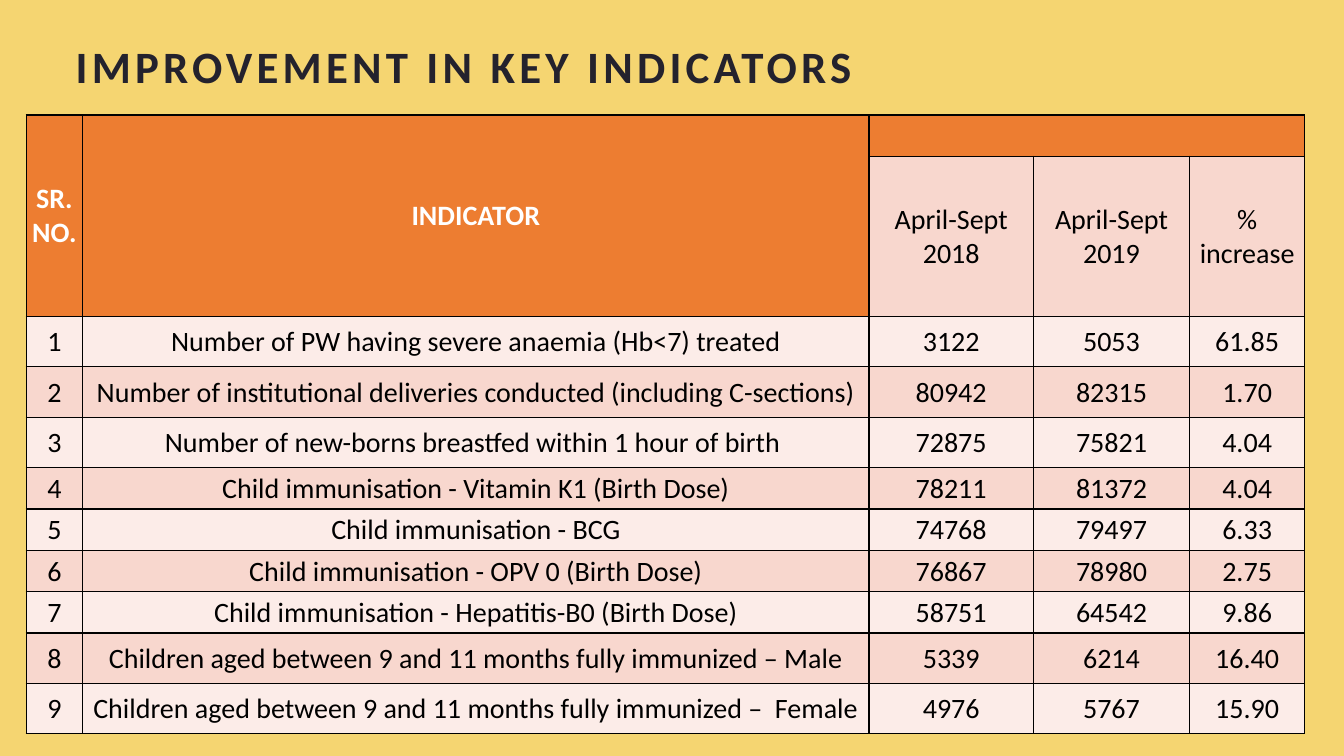
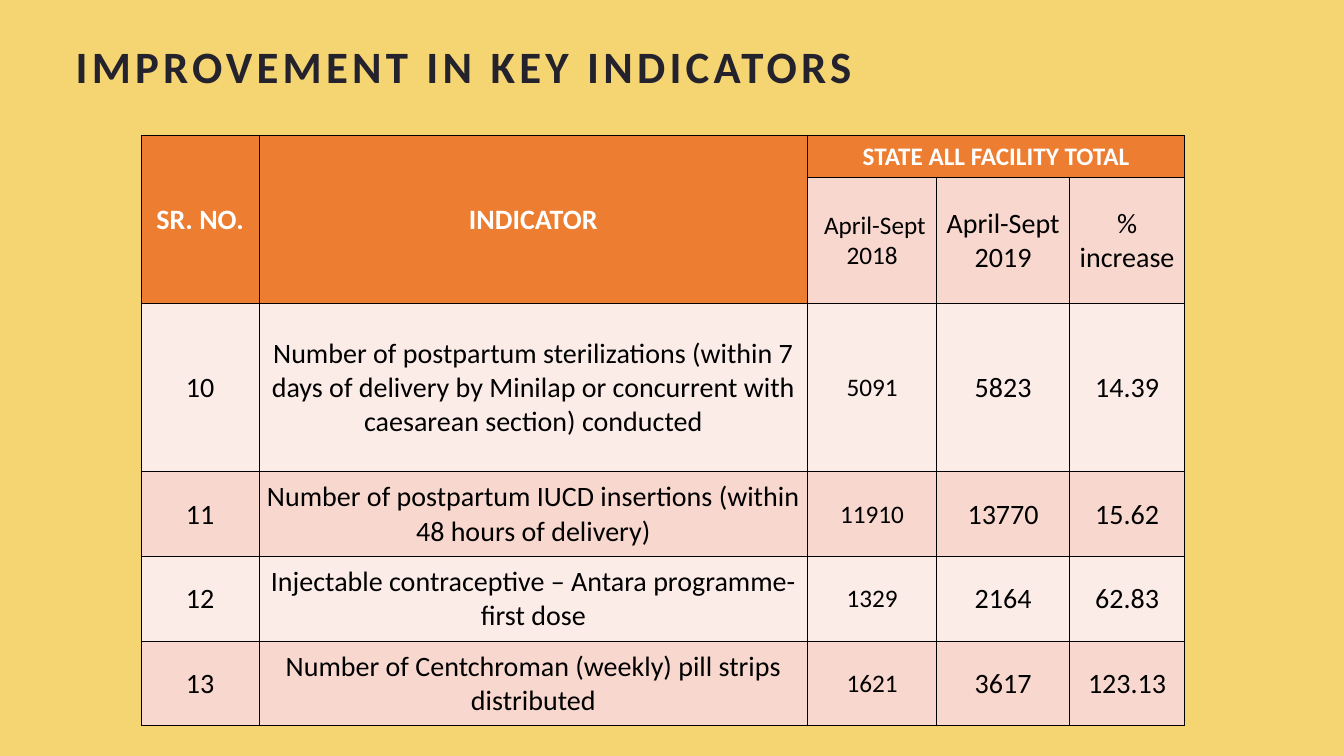
from lxml.etree import SubElement
from pptx import Presentation
from pptx.dml.color import RGBColor
from pptx.enum.text import MSO_ANCHOR as Anchor, MSO_AUTO_SIZE as AutoSize, PP_ALIGN as Align
from pptx.oxml.ns import qn
from pptx.util import Inches, Pt

BACKDROP = RGBColor(0xF5, 0xD5, 0x71)
INK = RGBColor(0x24, 0x22, 0x2D)
ORANGE = RGBColor(0xED, 0x7D, 0x31)
BAND_DARK = RGBColor(0xF8, 0xD7, 0xCE)
BAND_LIGHT = RGBColor(0xFC, 0xEC, 0xE8)
BLACK = RGBColor(0, 0, 0)
WHITE = RGBColor(255, 255, 255)

FONT = "Calibri"
TITLE = "IMPROVEMENT IN KEY INDICATORS"
TITLE_ONLY = 5
HEADER_ROWS = 2
CELL_FORMAT = {
    "vertical_anchor": Anchor.MIDDLE,
    "margin_left": Inches(0.01),
    "margin_top": Inches(0.01),
    "margin_right": Inches(0.01),
    "margin_bottom": 0,
}

BIRTH_TO_IMMUNIZATION = {
    "left": 0.26,
    "top": 1.14,
    "columns": [0.56, 7.8, 1.63, 1.55, 1.14],
    "heights": [0.41, 1.59] + [0.5] * 3 + [0.41] * 4 + [0.5] * 2,
    "border": 1,
    "sizes": [20] * 5,
    "rows": [
        ["SR. NO.", "INDICATOR", "", "", ""],
        ["", "", "April-Sept 2018", "April-Sept 2019", "% increase"],
        ["1", "Number of PW having severe anaemia (Hb<7) treated", "3122", "5053", "61.85"],
        ["2", "Number of institutional deliveries conducted (including C-sections)",
         "80942", "82315", "1.70"],
        ["3", "Number of new-borns breastfed within 1 hour of birth ", "72875", "75821", "4.04"],
        ["4", "Child immunisation - Vitamin K1 (Birth Dose)", "78211", "81372", "4.04"],
        ["5", "Child immunisation - BCG", "74768", "79497", "6.33"],
        ["6", "Child immunisation - OPV 0 (Birth Dose)", "76867", "78980", "2.75"],
        ["7", "Child immunisation - Hepatitis-B0 (Birth Dose)", "58751", "64542", "9.86"],
        ["8", "Children aged between 9 and 11 months fully immunized – Male",
         "5339", "6214", "16.40"],
        ["9", "Children aged between 9 and 11 months fully immunized –  Female",
         "4976", "5767", "15.90"],
    ],
}

FAMILY_PLANNING = {
    "left": 1.4,
    "top": 1.34,
    "columns": [1.17, 5.44, 1.28, 1.32, 1.14],
    "heights": [0.42, 1.25, 1.67] + [0.84] * 3,
    "border": 0.5,
    "sizes": [20, 20, 18, 20, 20],
    "rows": [
        ["SR. NO.", "INDICATOR", "STATE ALL FACILITY TOTAL", "", ""],
        ["", "", " April-Sept 2018", "April-Sept 2019", "% increase"],
        ["10", "Number of postpartum sterilizations (within 7 days of delivery by Minilap "
         "or concurrent with caesarean section) conducted", "5091", "5823", "14.39"],
        ["11", "Number of postpartum IUCD insertions (within 48 hours of delivery)",
         "11910", "13770", "15.62"],
        ["12", "Injectable contraceptive – Antara programme- first dose",
         "1329", "2164", "62.83"],
        ["13", "Number of Centchroman (weekly) pill strips distributed",
         "1621", "3617", "123.13"],
    ],
}


def apply_format(target, values):
    for name, value in values.items():
        setattr(target, name, value)


def write_text(frame, text, align, size, color, bold):
    para = frame.paragraphs[0]
    para.alignment = align
    span = para.add_run()
    span.text = text
    apply_format(span.font, {"name": FONT, "size": Pt(size), "bold": bold})
    span.font.color.rgb = color
    return span


def add_title(page):
    title = page.shapes.title
    apply_format(title, {"left": Inches(0.65), "top": Inches(0.33),
                         "width": Inches(9.84), "height": Inches(0.64)})
    frame = title.text_frame
    apply_format(frame, {"word_wrap": True, "vertical_anchor": Anchor.MIDDLE,
                         "auto_size": AutoSize.SHAPE_TO_FIT_TEXT})
    span = write_text(frame, TITLE, Align.LEFT, 32, INK, True)
    span.font._element.set("spc", "300")


def add_borders(cell, points):
    properties = cell._tc.get_or_add_tcPr()
    for side in ("a:lnL", "a:lnR", "a:lnT", "a:lnB"):
        line = SubElement(properties, qn(side), w=str(Pt(points)))
        fill = SubElement(line, qn("a:solidFill"))
        SubElement(fill, qn("a:srgbClr"), val=str(BLACK))


def format_cell(cell, text, is_header, band, size, border):
    apply_format(cell, CELL_FORMAT)
    add_borders(cell, border)
    cell.fill.solid()
    cell.fill.fore_color.rgb = ORANGE if is_header else band
    if text:
        color = WHITE if is_header else BLACK
        write_text(cell.text_frame, text, Align.CENTER, size, color, is_header)


def add_indicator_table(page, content):
    columns, heights, rows = content["columns"], content["heights"], content["rows"]
    table = page.shapes.add_table(
        len(rows), len(columns), Inches(content["left"]), Inches(content["top"]),
        Inches(sum(columns)), Inches(sum(heights))).table
    apply_format(table, {"first_row": False, "horz_banding": False})
    for column, width in zip(table.columns, columns):
        column.width = Inches(width)
    for row, height in zip(table.rows, heights):
        row.height = Inches(height)
    for column in (0, 1):
        table.cell(0, column).merge(table.cell(1, column))
    table.cell(0, 2).merge(table.cell(0, 4))
    for r, texts in enumerate(rows):
        band = BAND_DARK if r % 2 else BAND_LIGHT
        for c, text in enumerate(texts):
            is_header = r == 0 or (r < HEADER_ROWS and c < 2)
            format_cell(table.cell(r, c), text, is_header, band,
                        content["sizes"][c], content["border"])


def main():
    deck = Presentation()
    apply_format(deck, {"slide_width": Inches(13.33), "slide_height": Inches(7.5)})
    backdrop = deck.slide_master.background.fill
    backdrop.solid()
    backdrop.fore_color.rgb = BACKDROP
    for content in (BIRTH_TO_IMMUNIZATION, FAMILY_PLANNING):
        page = deck.slides.add_slide(deck.slide_layouts[TITLE_ONLY])
        add_title(page)
        add_indicator_table(page, content)
    deck.save("out.pptx")


if __name__ == "__main__":
    main()
